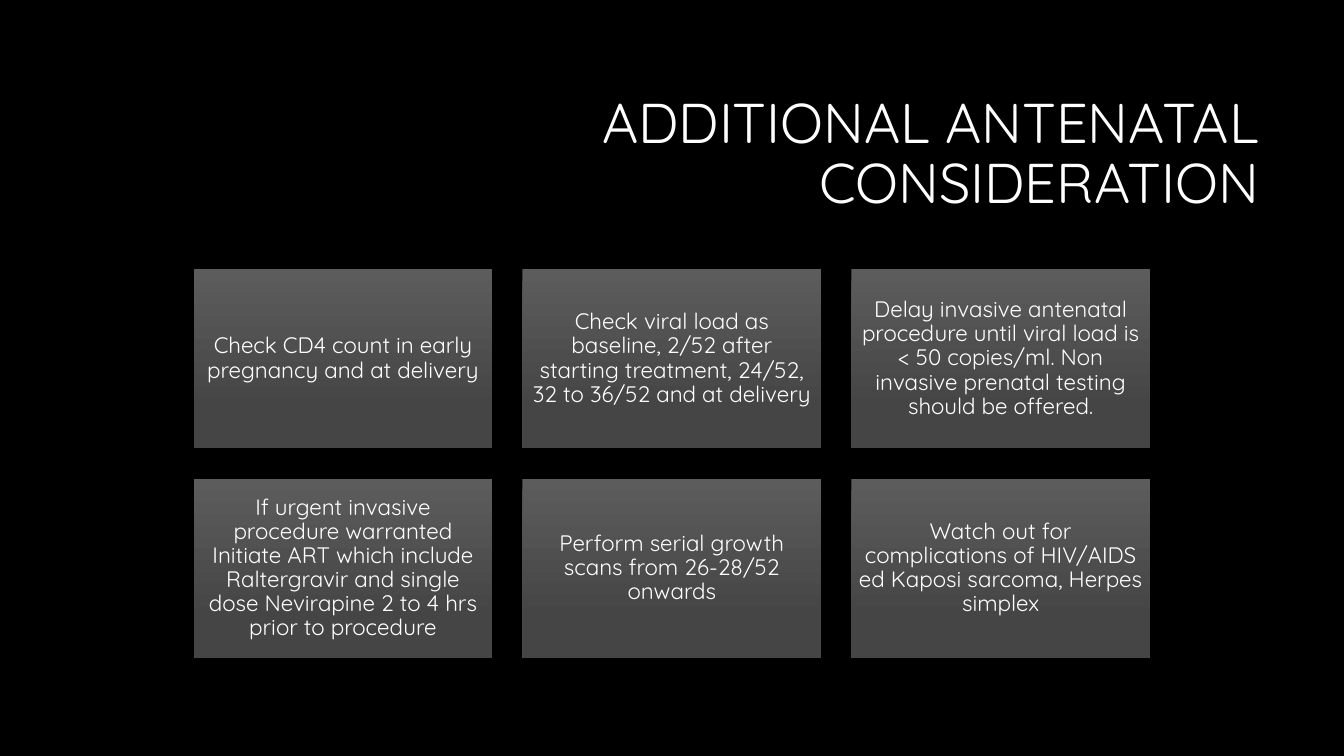
from dataclasses import dataclass

from pptx import Presentation
from pptx.dml.color import RGBColor
from pptx.enum.shapes import MSO_SHAPE
from pptx.enum.text import MSO_ANCHOR, MSO_AUTO_SIZE, PP_ALIGN
from pptx.util import Cm, Pt

RECTANGLE = MSO_SHAPE.RECTANGLE
MIDDLE = MSO_ANCHOR.MIDDLE
NO_AUTOFIT = MSO_AUTO_SIZE.NONE
CENTER, RIGHT = PP_ALIGN.CENTER, PP_ALIGN.RIGHT
TITLE_ONLY = 5


@dataclass(frozen=True)
class Theme:
    font: str = "Quicksand"
    background: RGBColor = RGBColor(0x00, 0x00, 0x00)
    text: RGBColor = RGBColor(0xFF, 0xFF, 0xFF)
    card_top: RGBColor = RGBColor(0x5C, 0x5C, 0x5C)
    card_bottom: RGBColor = RGBColor(0x45, 0x45, 0x45)
    title_size: int = 40
    card_size: int = 16


THEME = Theme()
HEADING = "ADDITIONAL ANTENATAL CONSIDERATION"
CONSIDERATIONS = [
    "Check CD4 count in early pregnancy and at delivery",
    "Check viral load as baseline, 2/52 after starting treatment, 24/52, "
    "32 to 36/52 and at delivery",
    "Delay invasive antenatal procedure until viral load is < 50 copies/ml. "
    "Non invasive prenatal testing should be offered.",
    "If urgent invasive procedure warranted Initiate ART which include "
    "Raltergravir and single dose Nevirapine 2 to 4 hrs prior to procedure",
    "Perform serial growth scans from 26-28/52 onwards",
    "Watch out for complications of HIV/AIDS ed Kaposi sarcoma, Herpes simplex",
]


def write_text(frame, text, *, size, align, inset):
    frame.word_wrap = True
    frame.auto_size = NO_AUTOFIT
    frame.vertical_anchor = MIDDLE
    frame.margin_left = frame.margin_right = Cm(inset)
    frame.margin_top = frame.margin_bottom = Cm(inset)
    paragraph = frame.paragraphs[0]
    paragraph.alignment = align
    paragraph.line_spacing = 0.9
    run = paragraph.add_run()
    run.text = text
    run.font.name = THEME.font
    run.font.size = Pt(size)
    run.font.color.rgb = THEME.text


def place_heading(slide, left, top, width, height):
    heading = slide.shapes.title
    heading.left, heading.top = Cm(left), Cm(top)
    heading.width, heading.height = Cm(width), Cm(height)
    write_text(heading.text_frame, HEADING,
               size=THEME.title_size, align=RIGHT, inset=0.25)


def add_card(slide, text, left, top, width, height):
    card = slide.shapes.add_shape(
        RECTANGLE, Cm(left), Cm(top), Cm(width), Cm(height))
    card.shadow.inherit = False
    card.line.fill.background()
    card.fill.gradient()
    card.fill.gradient_angle = 270
    upper, lower = card.fill.gradient_stops
    upper.position, upper.color.rgb = 0, THEME.card_top
    lower.position, lower.color.rgb = 0.78, THEME.card_bottom
    write_text(card.text_frame, text,
               size=THEME.card_size, align=CENTER, inset=0.17)


def add_card_grid(slide, left, top, width, height, columns=3, gap=0.76):
    rows = len(CONSIDERATIONS) // columns
    card_width = (width - gap * (columns - 1)) / columns
    card_height = (height - gap * (rows - 1)) / rows
    for index, consideration in enumerate(CONSIDERATIONS):
        row, column = divmod(index, columns)
        add_card(slide, consideration,
                 left + column * (card_width + gap),
                 top + row * (card_height + gap),
                 card_width, card_height)


def main():
    deck = Presentation()
    deck.slide_width, deck.slide_height = Cm(33.87), Cm(19.05)
    slide = deck.slides.add_slide(deck.slide_layouts[TITLE_ONLY])
    slide.background.fill.solid()
    slide.background.fill.fore_color.rgb = THEME.background
    place_heading(slide, 8.05, 2.13, 23.93, 3.58)
    add_card_grid(slide, 4.88, 6.78, 24.1, 9.8)
    deck.save("out.pptx")


if __name__ == "__main__":
    main()
